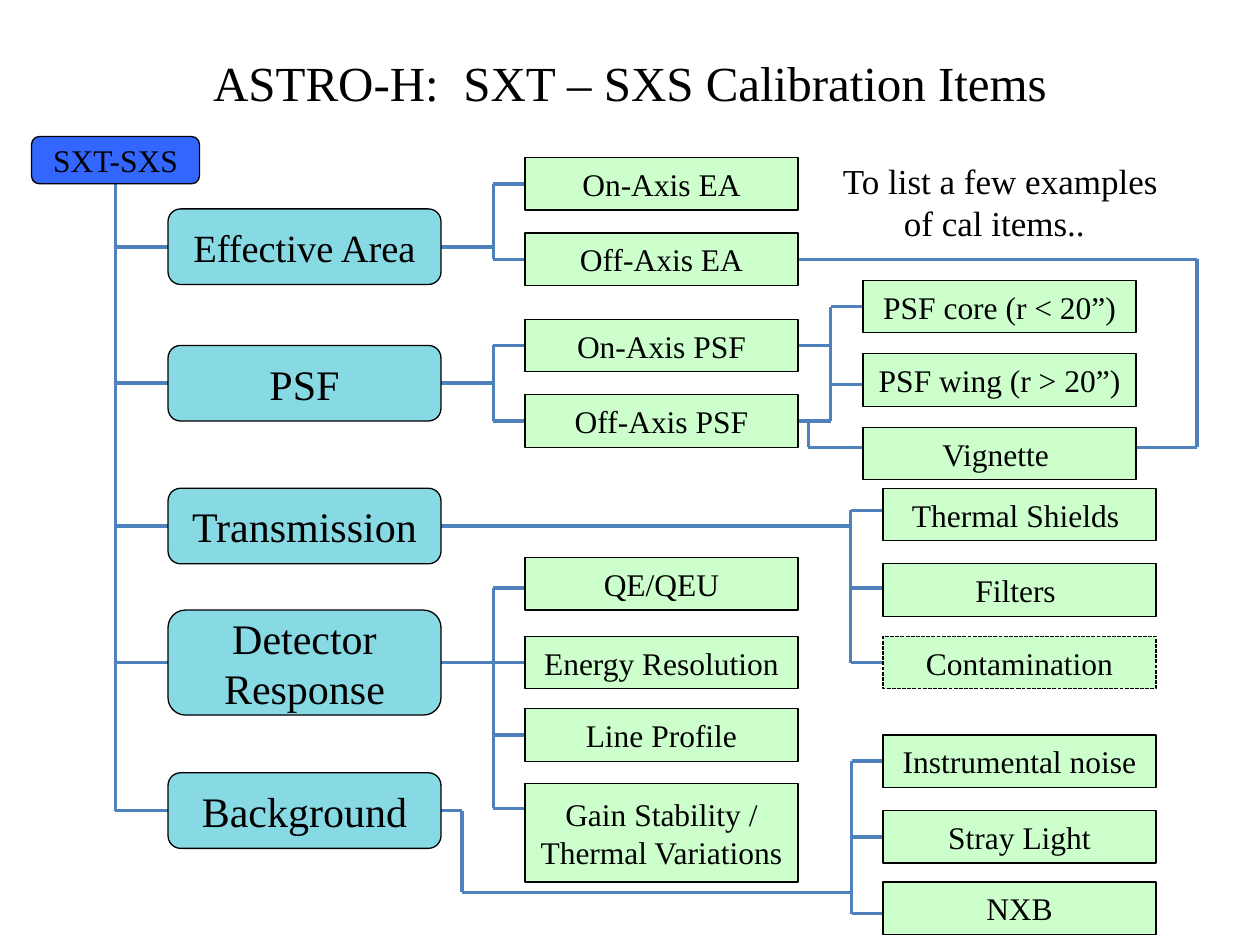
import pptx
import pptx.util
import pptx.dml.color
import pptx.enum.dml
import pptx.enum.shapes
import pptx.enum.text
import lxml.etree

RGBColor = pptx.dml.color.RGBColor
BLACK = RGBColor(0x00, 0x00, 0x00)
ROOT_BLUE = RGBColor(0x33, 0x66, 0xFF)
GROUP_TEAL = RGBColor(0x87, 0xD9, 0xE3)
ITEM_GREEN = RGBColor(0xCC, 0xFF, 0xCC)
WIRE_BLUE = RGBColor(0x4F, 0x81, 0xBD)
FONT = "Times New Roman"
ROUNDED = pptx.enum.shapes.MSO_SHAPE.FLOWCHART_ALTERNATE_PROCESS
RECTANGLE = pptx.enum.shapes.MSO_SHAPE.RECTANGLE
CENTER = pptx.enum.text.PP_ALIGN.CENTER
LEFT = pptx.enum.text.PP_ALIGN.LEFT

presentation = pptx.Presentation()
presentation.slide_width = pptx.util.Inches(10)
presentation.slide_height = pptx.util.Inches(7.5)
slide = presentation.slides.add_slide(presentation.slide_layouts[6])
CELL = presentation.slide_width / 120


def write(shape, text, size, alignment=CENTER):
    frame = shape.text_frame
    frame.word_wrap = True
    frame.vertical_anchor = pptx.enum.text.MSO_ANCHOR.MIDDLE
    frame.text = text
    for paragraph in frame.paragraphs:
        paragraph.alignment = alignment
        paragraph.font.name = FONT
        paragraph.font.size = pptx.util.Pt(size)
        paragraph.font.color.rgb = BLACK


def add_box(kind, column, row, width, height, fill, text, size):
    shape = slide.shapes.add_shape(
        kind, *[round(value * CELL) for value in (column, row, width, height)])
    shape.shadow.inherit = False
    shape.fill.solid()
    shape.fill.fore_color.rgb = fill
    shape.line.color.rgb = BLACK
    shape.line.width = pptx.util.Pt(0.75)
    write(shape, text, size)
    return shape


GROUP_LEFT, ITEM_LEFT, DETAIL_LEFT, PSF_LEFT = 16, 50, 84.1, 82.2
BOX_WIDTH, ITEM_HEIGHT = 26, 5
ITEM_RIGHT = ITEM_LEFT + BOX_WIDTH
PSF_RIGHT = PSF_LEFT + BOX_WIDTH
GROUP_RIGHT = GROUP_LEFT + BOX_WIDTH
GROUP_WIRES = [23.5, 36.5, 50.1, 63.1, 77.2]

branches = [
    (11, GROUP_LEFT, [17.5] + GROUP_WIRES),
    (47, ITEM_LEFT, [17.5, 24.7]),
    (47, ITEM_LEFT, [32.9, 40.1]),
    (47, ITEM_LEFT, [56, 63.1, 70, 77]),
    (79.1, PSF_LEFT, [29.2, 36.6, 40.1]),
    (81, DETAIL_LEFT, [48.6, 56, 63.1]),
    (81.1, DETAIL_LEFT, [72.5, 79.7, 87]),
]
wires = []
for trunk, end, rows in branches:
    wires.append((trunk, rows[0], trunk, rows[-1]))
    for row in rows:
        if (trunk, row) not in [(11, 17.5), (79.1, 40.1)]:
            wires.append((trunk, row, end, row))

for row, end in zip(GROUP_WIRES, [47, 47, 81, 47, 44]):
    wires.append((GROUP_RIGHT, row, end, row))

routes = [
    [(44, 77.2), (44, 85), (81.1, 85)],
    [(ITEM_RIGHT, 32.9), (79.1, 32.9)],
    [(ITEM_RIGHT, 40.1), (79.1, 40.1)],
    [(77, 40.1), (77, 42.6), (PSF_LEFT, 42.6)],
    [(ITEM_RIGHT, 24.7), (114, 24.7), (114, 42.6), (PSF_RIGHT, 42.6)],
]
for route in routes:
    wires += [start + end for start, end in zip(route, route[1:])]

for wire in wires:
    connector = slide.shapes.add_connector(
        pptx.enum.shapes.MSO_CONNECTOR.STRAIGHT, *[round(value * CELL) for value in wire])
    connector.line.color.rgb = WIRE_BLUE
    connector.line.width = pptx.util.Pt(2)
    lxml.etree.SubElement(
        connector._element.spPr, pptx.oxml.ns.qn("a:effectLst"))

add_box(ROUNDED, 3, 13, 16, 4.5, ROOT_BLUE, "SXT-SXS", 18)

groups = [
    ("Effective Area", 22, 7.2),
    ("PSF", 24, 7.2),
    ("Transmission", 24, 7.2),
    ("Detector Response", 24, 10),
    ("Background", 24, 7.2),
]
for (text, size, height), middle in zip(groups, GROUP_WIRES):
    add_box(ROUNDED, GROUP_LEFT, middle - height / 2, BOX_WIDTH, height, GROUP_TEAL, text, size)

items = [
    (ITEM_LEFT, 15, "On-Axis EA"),
    (ITEM_LEFT, 22.2, "Off-Axis EA"),
    (ITEM_LEFT, 30.4, "On-Axis PSF"),
    (ITEM_LEFT, 37.6, "Off-Axis PSF"),
    (ITEM_LEFT, 53.1, "QE/QEU"),
    (ITEM_LEFT, 60.6, "Energy Resolution"),
    (ITEM_LEFT, 67.5, "Line Profile"),
    (PSF_LEFT, 26.7, "PSF core (r < 20”)"),
    (PSF_LEFT, 33.7, "PSF wing (r > 20”)"),
    (PSF_LEFT, 40.7, "Vignette "),
    (DETAIL_LEFT, 46.5, "Thermal Shields "),
    (DETAIL_LEFT, 53.7, "Filters "),
    (DETAIL_LEFT, 70, "Instrumental noise"),
    (DETAIL_LEFT, 77.2, "Stray Light"),
    (DETAIL_LEFT, 84, "NXB"),
]
for column, row, text in items:
    add_box(RECTANGLE, column, row, BOX_WIDTH, ITEM_HEIGHT, ITEM_GREEN, text, 18)

add_box(RECTANGLE, ITEM_LEFT, 74.6, BOX_WIDTH, 9.4, ITEM_GREEN,
        "Gain Stability /\nThermal Variations", 18)
contamination = add_box(RECTANGLE, DETAIL_LEFT, 60.6, BOX_WIDTH, ITEM_HEIGHT, ITEM_GREEN,
                        "Contamination", 18)
contamination.line.dash_style = pptx.enum.dml.MSO_LINE.SQUARE_DOT

title = slide.shapes.add_textbox(*[round(value * CELL) for value in (6, 3.6, 108, 8.4)])
write(title, "ASTRO-H:  SXT – SXS Calibration Items", 28)

note = slide.shapes.add_textbox(*[round(value * CELL) for value in (79.1, 14.6, 32.6, 9.2)])
write(note, "To list a few examples\nof cal items..", 20, LEFT)
note.text_frame.word_wrap = False
note_indent = note.text_frame.paragraphs[1]._p.get_or_add_pPr()
note_indent.set("marL", str(round(5.8 * CELL)))

presentation.save("out.pptx")
